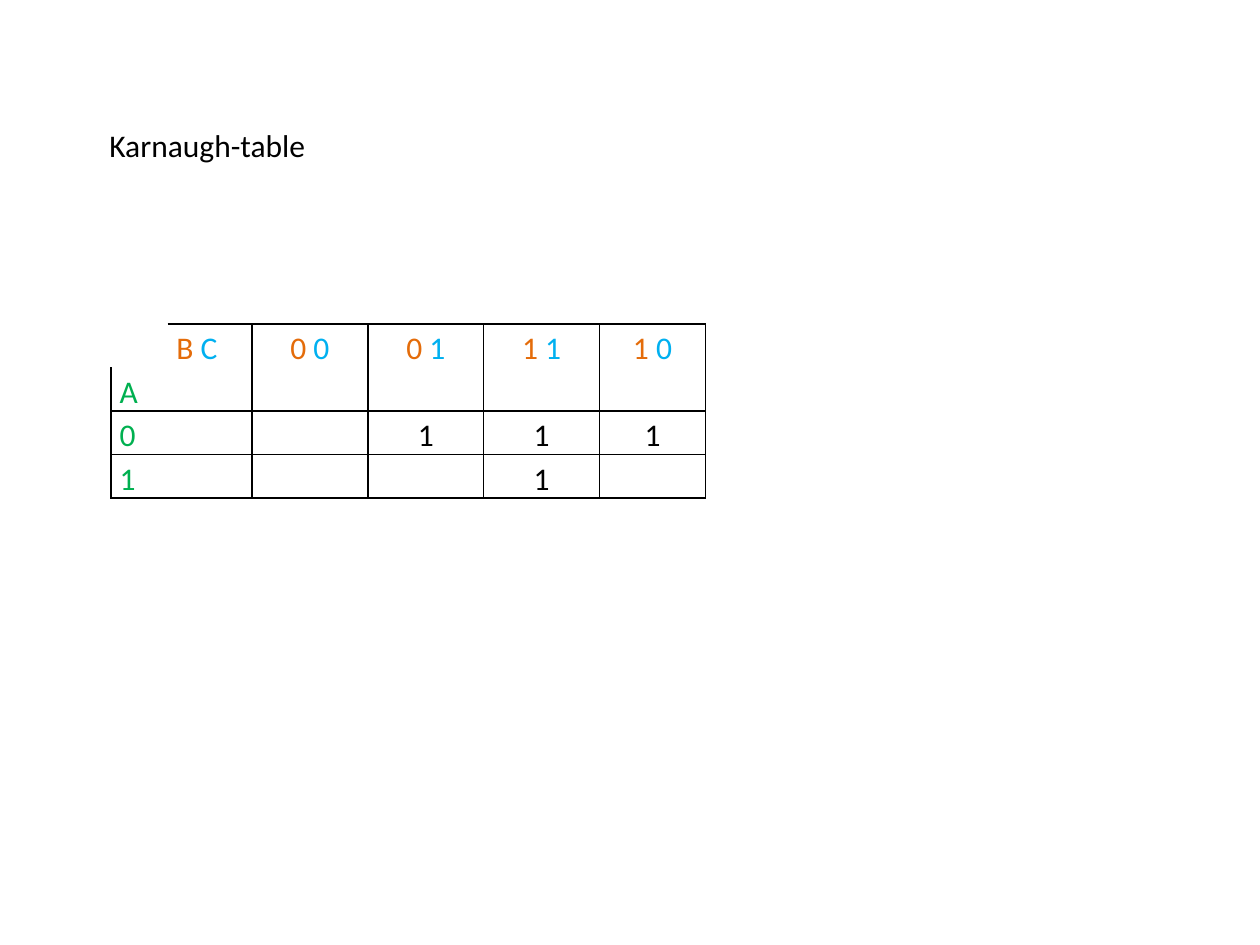
import pptx
import pptx.util
import pptx.dml.color
import pptx.enum.text
import pptx.oxml
import pptx.oxml.ns
import lxml.etree

IN = pptx.util.Inches
BLACK, ORANGE, BLUE, GREEN = "000000", "E46C0A", "00B0F0", "00B050"
NO_STYLE = "{2D5ABB26-0587-4C30-8999-92F81FD0307C}"
COLS = [0.45, 0.67, 0.92, 0.92, 0.92, 0.84, 0.89]
ROWS = [0.345] * 4 + [0.69]
GRID_COLS, GRID_ROWS = 6, 4  # ruled part; the last row and column stay open
VALUES = [["", "1", "1", "1"], ["", "", "1", ""]]


def rgb(value):
    return pptx.dml.color.RGBColor.from_string(value)


def write(tf, text, colors=(BLACK,), size=18, align="LEFT", spacing=None):
    """Write one paragraph; with two colors, each word gets its own."""
    p = tf.paragraphs[0]
    p.alignment = getattr(pptx.enum.text.PP_ALIGN, align)
    p.line_spacing = spacing
    p.font.size = pptx.util.Pt(size)
    words = text.split(" ") if len(colors) > 1 else [text]
    for i, (word, color) in enumerate(zip(words, colors)):
        r = p.add_run()
        r.text = word if i == len(words) - 1 else word + " "
        r.font.size, r.font.name = pptx.util.Pt(size), "Calibri"
        r.font.color.rgb = rgb(color)


def add_title(s, text):
    sp = s.shapes.add_textbox(IN(0.77), IN(0.95), IN(5.49), IN(0.71))
    sp.text_frame.word_wrap = True
    write(sp.text_frame, text)


def ruled_edges(row, col):
    """Edges to rule, in schema order: none inside merges or the open corner."""
    if row >= GRID_ROWS or col >= GRID_COLS or (row, col) == (0, 0):
        return ""
    skip = {0: "B", 1: "T"}.get(row, "") + {0: "R", 1: "L"}.get(col, "")
    return [e for e in "LRTB" if e not in skip]


def rule_cell(cell, edges):
    tcPr = cell._tc.get_or_add_tcPr()
    for i, edge in enumerate(edges):
        ln = pptx.oxml.parse_xml(
            f'<a:ln{edge} {pptx.oxml.ns.nsdecls("a")} w="12700"><a:solidFill>'
            f'<a:srgbClr val="{BLACK}"/></a:solidFill></a:ln{edge}>')
        tcPr.insert(i, ln)


def add_grid(s):
    tbl = s.shapes.add_table(len(ROWS), len(COLS), IN(0.88), IN(2.57),
                             IN(sum(COLS)), IN(sum(ROWS))).table
    tbl.first_row = tbl.horz_banding = False
    tbl._tbl.tblPr[0].text = NO_STYLE
    for col, width in zip(tbl.columns, COLS):
        col.width = IN(width)
    for row, height in zip(tbl.rows, ROWS):
        row.height = IN(height)
    for r in range(len(ROWS)):
        for c in range(len(COLS)):
            cell = tbl.cell(r, c)
            cell.margin_left = cell.margin_right = IN(0.07)
            cell.margin_top = cell.margin_bottom = 0
            cell.fill.background()
            cell.text_frame.paragraphs[0].font.size = pptx.util.Pt(18)
            rule_cell(cell, ruled_edges(r, c))
    for c in range(1, GRID_COLS):
        tbl.cell(0, c).merge(tbl.cell(1, c))
    for r in range(2, len(ROWS)):
        tbl.cell(r, 0).merge(tbl.cell(r, 1))
    return tbl


def fill_grid(tbl):
    def put(row, col, text, **fmt):
        write(tbl.cell(row, col).text_frame, text, spacing=1.15, **fmt)

    put(0, 1, "B C", colors=(ORANGE, BLUE))
    for c, code in enumerate(["0 0", "0 1", "1 1", "1 0"], 2):
        put(0, c, code, colors=(ORANGE, BLUE), align="CENTER")
    for r, label in enumerate("A01", 1):
        put(r, 0, label, colors=(GREEN,))
    for r, values in enumerate(VALUES, 2):
        for c, value in enumerate(values, 2):
            if value:
                tbl.cell(r, c).vertical_anchor = pptx.enum.text.MSO_ANCHOR.MIDDLE
                put(r, c, value, align="CENTER")


def main():
    prs = pptx.Presentation()
    prs.slide_width, prs.slide_height = IN(10), IN(7.5)
    s = prs.slides.add_slide(prs.slide_layouts[6])
    add_title(s, "Karnaugh-table")
    fill_grid(add_grid(s))
    prs.save("out.pptx")


if __name__ == "__main__":
    main()
